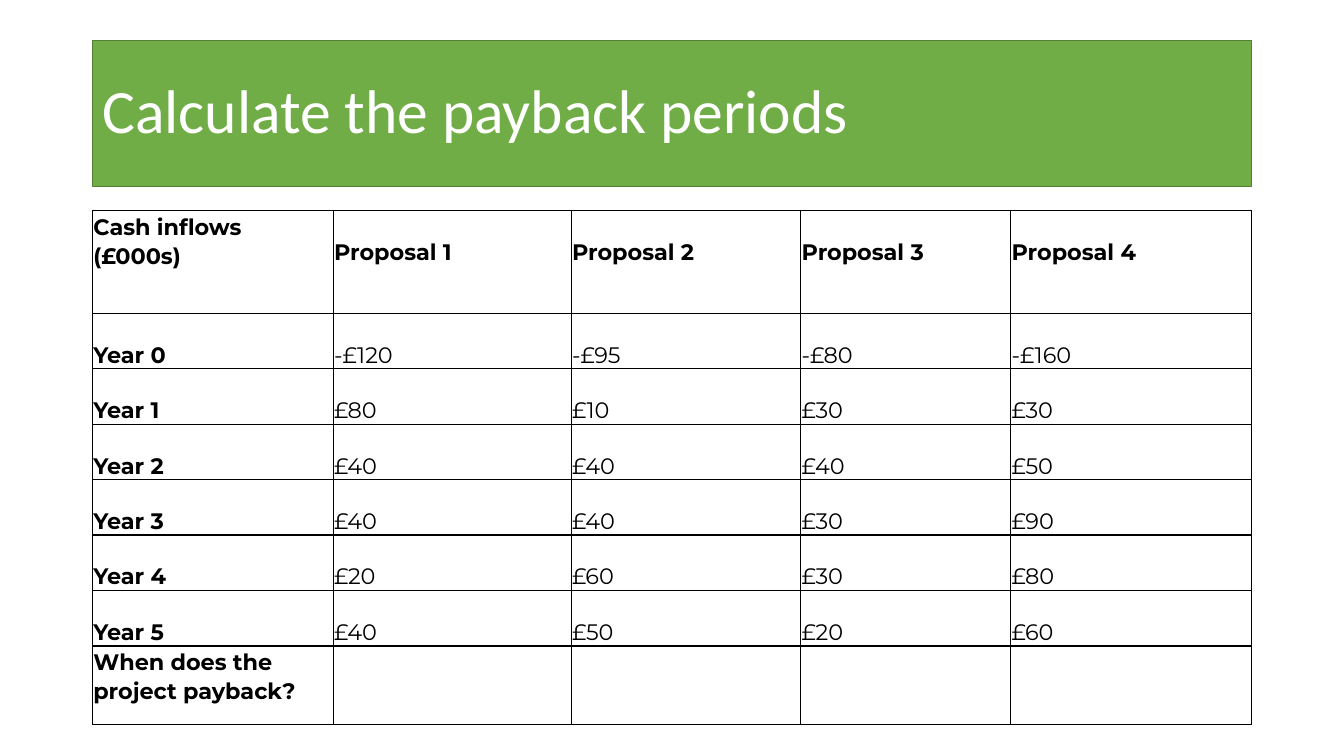
from pptx import Presentation
from pptx.dml.color import RGBColor
from pptx.enum.shapes import MSO_SHAPE
from pptx.enum.text import MSO_ANCHOR, PP_ALIGN
from pptx.oxml import parse_xml
from pptx.oxml.ns import nsdecls
from pptx.util import Pt

RECTANGLE = MSO_SHAPE.RECTANGLE
TOP, MIDDLE, BOTTOM = MSO_ANCHOR.TOP, MSO_ANCHOR.MIDDLE, MSO_ANCHOR.BOTTOM
LEFT = PP_ALIGN.LEFT

GREEN = RGBColor(0x70, 0xAD, 0x47)
DARK_GREEN = RGBColor(0x53, 0x80, 0x35)
WHITE = RGBColor(0xFF, 0xFF, 0xFF)
BLACK = RGBColor(0x00, 0x00, 0x00)

MARGIN = 66
COLUMN_WIDTHS = [172, 170, 164, 150, 172]
ROW_HEIGHTS = [73.4] + [35.3] * 6 + [56.2]
CASH_FLOWS = [
    ["Cash inflows (£000s)", "Proposal 1", "Proposal 2", "Proposal 3", "Proposal 4"],
    ["Year 0", "-£120", "-£95", "-£80", "-£160"],
    ["Year 1", "£80", "£10", "£30", "£30"],
    ["Year 2", "£40", "£40", "£40", "£50"],
    ["Year 3", "£40", "£40", "£30", "£90"],
    ["Year 4", "£20", "£60", "£30", "£80"],
    ["Year 5", "£40", "£50", "£20", "£60"],
    ["When does the project payback?", "", "", "", ""],
]


class SlideBuilder:
    title_font = "Calibri"
    table_font = "Montserrat"

    def __init__(self, page):
        self.page = page

    def style_text(self, para, text, name, size, color, bold=False):
        para.text = text
        para.alignment = LEFT
        para.font.name = name
        para.font.size = Pt(size)
        para.font.bold = bold
        para.font.color.rgb = color

    def title(self, text, left, top, width, height):
        box = self.page.shapes.add_shape(RECTANGLE, Pt(left), Pt(top), Pt(width), Pt(height))
        box.shadow.inherit = False
        box.fill.solid()
        box.fill.fore_color.rgb = GREEN
        box.line.color.rgb = DARK_GREEN
        box.line.width = Pt(1)
        box.text_frame.word_wrap = True
        box.text_frame.vertical_anchor = MIDDLE
        para = box.text_frame.paragraphs[0]
        self.style_text(para, text, self.title_font, 44, WHITE)
        para.line_spacing = 0.9

    def border(self, cell):
        properties = cell._tc.get_or_add_tcPr()
        for index, side in enumerate("LRTB"):
            properties.insert(index, parse_xml(
                f'<a:ln{side} {nsdecls("a")} w="{Pt(1)}"><a:solidFill>'
                f'<a:srgbClr val="{BLACK}"/></a:solidFill></a:ln{side}>'))

    def cell(self, cell, text, bold, anchor, spacing):
        cell.fill.solid()
        cell.fill.fore_color.rgb = WHITE
        self.border(cell)
        cell.margin_left = cell.margin_right = cell.margin_top = Pt(0.7)
        cell.margin_bottom = Pt(0)
        cell.vertical_anchor = anchor
        if text:
            para = cell.text_frame.paragraphs[0]
            self.style_text(para, text, self.table_font, 16, BLACK, bold)
            para.line_spacing = spacing
            para.space_after = Pt(8)

    def table(self, rows, left, top, widths, heights):
        table = self.page.shapes.add_table(
            len(rows), len(widths), Pt(left), Pt(top), Pt(sum(widths)), Pt(sum(heights))).table
        table.first_row = table.horz_banding = False
        for column, width in zip(table.columns, widths):
            column.width = Pt(width)
        for row, height in zip(table.rows, heights):
            row.height = Pt(height)
        last = len(rows) - 1
        for row, texts in enumerate(rows):
            for column, text in enumerate(texts):
                heading = row == 0 or column == 0
                wrapped = column == 0 and row in (0, last)
                self.cell(table.cell(row, column), text, heading,
                          TOP if heading else BOTTOM, 1.07 if wrapped else 2.0)


def main():
    deck = Presentation()
    deck.slide_width, deck.slide_height = Pt(960), Pt(540)
    builder = SlideBuilder(deck.slides.add_slide(deck.slide_layouts[6]))
    builder.title("Calculate the payback periods", MARGIN, 28.75, sum(COLUMN_WIDTHS), 104.4)
    builder.table(CASH_FLOWS, MARGIN, 150.4, COLUMN_WIDTHS, ROW_HEIGHTS)
    deck.save("out.pptx")


if __name__ == "__main__":
    main()
